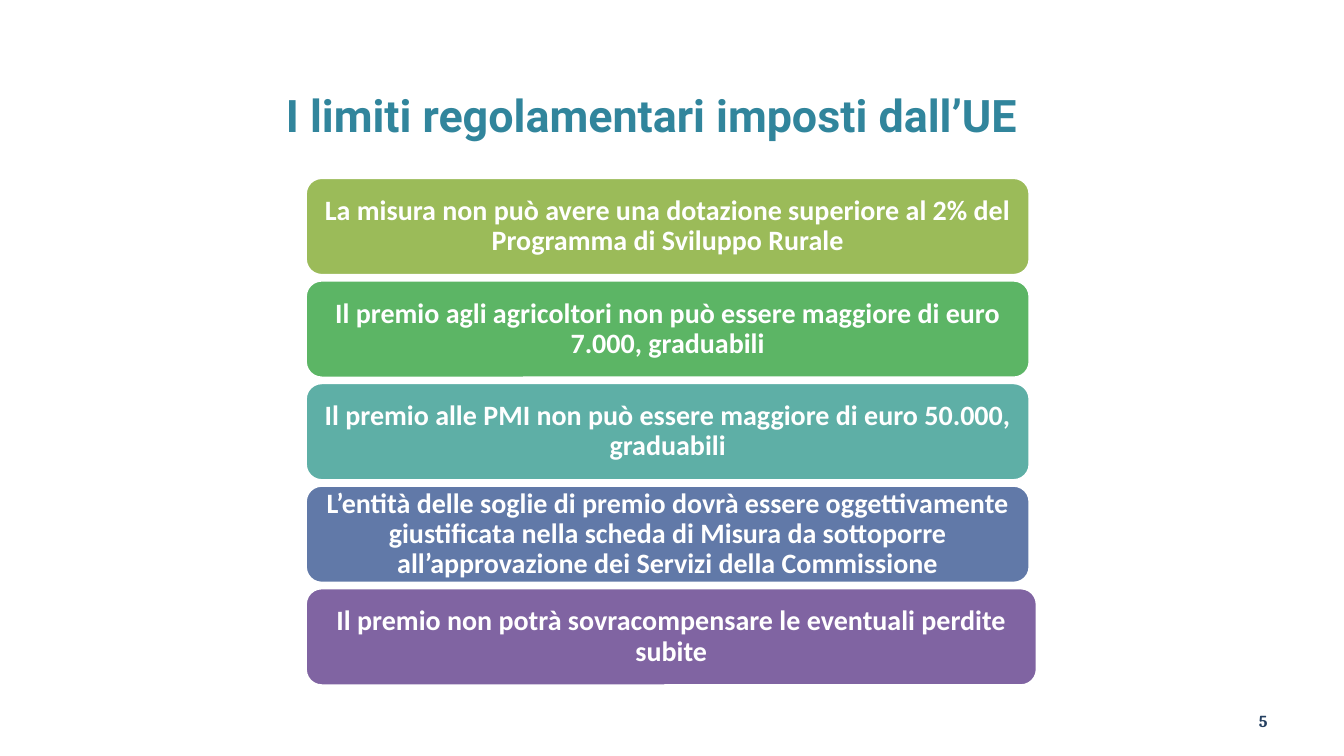
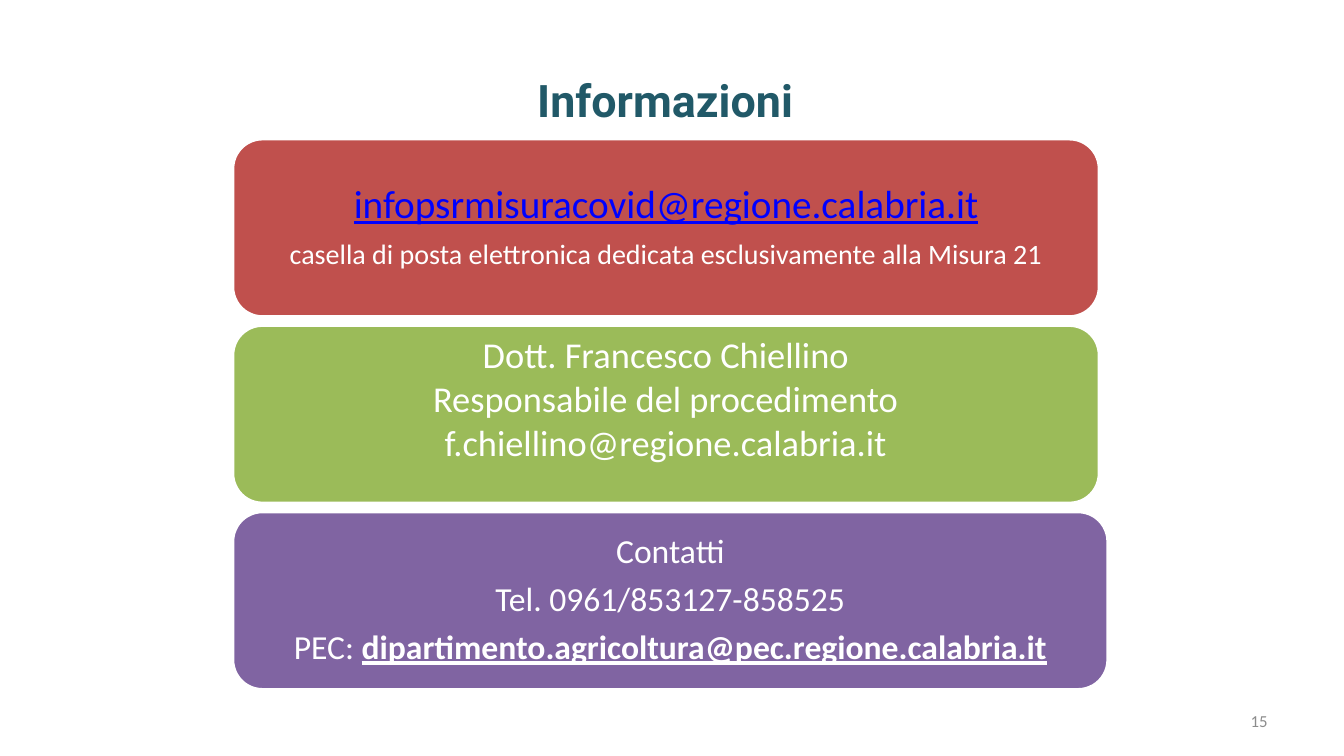
from dataclasses import dataclass

from pptx import Presentation
from pptx.dml.color import RGBColor
from pptx.enum.shapes import MSO_SHAPE
from pptx.enum.text import MSO_ANCHOR, PP_ALIGN
from pptx.util import Inches, Pt

ROUNDED = MSO_SHAPE.ROUNDED_RECTANGLE
MIDDLE = MSO_ANCHOR.MIDDLE
CENTER, RIGHT = PP_ALIGN.CENTER, PP_ALIGN.RIGHT

SLIDE_WIDTH, SLIDE_HEIGHT = Inches(13.33), Inches(7.5)
TITLE_ONLY = 5
BODY_FONT, TITLE_FONT = "Calibri", "Roboto"
WHITE, RED, GREEN, PURPLE = "FFFFFF", "C0504D", "9BBB59", "8064A2"
LINK_BLUE = "0000FF"
CARD_GAP = 0.05
LAST_CARD_STRETCH = 1.01
NUMBER_BOX = (71.7, 92.7, 23.35, 5.3)


@dataclass
class Line:
    """One line of card text, with an optional highlighted ending."""
    text: str
    size: int
    bold: bool = False
    underline: bool = False
    color: str = WHITE
    highlight: str = ""
    tight: bool = True


@dataclass
class Card:
    """A coloured card with its lines and its horizontal, top and bottom insets."""
    fill: str
    lines: list
    insets: tuple = (0.1, 0.05, 0.05)


def rgb(code):
    """Turn a hex string into a colour."""
    return RGBColor.from_string(code)


def to_slide(box):
    """Convert a box in percent of the slide into slide lengths."""
    left, top, width, height = box
    return (int(SLIDE_WIDTH * left / 100), int(SLIDE_HEIGHT * top / 100),
            int(SLIDE_WIDTH * width / 100), int(SLIDE_HEIGHT * height / 100))


def style(font, size, color, name=BODY_FONT, bold=False, underline=False):
    """Format a font."""
    font.name, font.size, font.bold, font.underline = name, Pt(size), bold, underline
    font.color.rgb = rgb(color)


def add_title(slide, text, box, color):
    """Place and format the slide title."""
    title = slide.shapes.title
    title.left, title.top, title.width, title.height = to_slide(box)
    title.text_frame.vertical_anchor = MIDDLE
    title.text_frame.text = text
    heading = title.text_frame.paragraphs[0]
    heading.alignment = CENTER
    style(heading.font, 32, color, TITLE_FONT, bold=True)


def add_number(slide, number, color, font=BODY_FONT, bold=False):
    """Write the page number at the lower right."""
    frame = slide.shapes.add_textbox(*to_slide(NUMBER_BOX)).text_frame
    frame.word_wrap = True
    frame.vertical_anchor = MIDDLE
    frame.text = number
    page = frame.paragraphs[0]
    page.alignment = RIGHT
    style(page.font, 12, color, font, bold)


def write_line(paragraph, line):
    """Write one line of card text."""
    paragraph.alignment = CENTER
    if line.tight:
        paragraph.line_spacing = 0.9
        paragraph.space_after = Pt(round(line.size * 0.35, 1))
    style(paragraph.font, line.size, line.color, bold=line.bold, underline=line.underline)
    paragraph.add_run().text = line.text
    if line.highlight:
        ending = paragraph.add_run()
        ending.text = line.highlight
        ending.font.bold = ending.font.underline = True


def add_card(slide, card, left, top, width, height):
    """Draw one rounded card with its text."""
    panel = slide.shapes.add_shape(ROUNDED, int(left), int(top), int(width), int(height))
    panel.shadow.inherit = False
    panel.fill.solid()
    panel.fill.fore_color.rgb = rgb(card.fill)
    panel.line.color.rgb = rgb(WHITE)
    panel.line.width = Pt(2)
    frame = panel.text_frame
    frame.word_wrap = True
    frame.vertical_anchor = MIDDLE
    side, above, below = card.insets
    frame.margin_left = frame.margin_right = Inches(side)
    frame.margin_top, frame.margin_bottom = Inches(above), Inches(below)
    for index, line in enumerate(card.lines):
        write_line(frame.add_paragraph() if index else frame.paragraphs[0], line)


def add_card_stack(slide, cards, box):
    """Stack equal cards in a box, the last one slightly wider."""
    left, top, width, height = to_slide(box)
    count = len(cards)
    card_height = height / (count + CARD_GAP * (count - 1))
    for index, card in enumerate(cards):
        stretch = LAST_CARD_STRETCH if index == count - 1 else 1
        card_top = top + index * card_height * (1 + CARD_GAP)
        add_card(slide, card, left, card_top, width * stretch, card_height)


def build_limits(slide):
    """Build the slide on the regulatory limits."""
    limits = [
        (GREEN, "La misura non può avere una dotazione superiore al 2% del "
                "Programma di Sviluppo Rurale"),
        ("5CB565", "Il premio agli agricoltori non può essere maggiore di euro "
                   "7.000, graduabili"),
        ("5EAFA6", "Il premio alle PMI non può essere maggiore di euro 50.000, graduabili"),
        ("6179A8", "L’entità delle soglie di premio dovrà essere oggettivamente "
                   "giustificata nella scheda di Misura da sottoporre "
                   "all’approvazione dei Servizi della Commissione"),
        (PURPLE, "Il premio non potrà sovracompensare le eventuali perdite subite"),
    ]
    cards = [Card(fill, [Line(text, 20, bold=True)], (0.08, 0.04, 0.04))
             for fill, text in limits]
    add_title(slide, "I limiti regolamentari imposti dall’UE", (3.5, 10.9, 90, 8.5), "31859C")
    add_card_stack(slide, cards, (22.73, 23.5, 53.9, 67.2))
    add_number(slide, "5", "254061", "Cambria", bold=True)


def build_contacts(slide):
    """Build the slide with the contact details."""
    manager = ["Dott. Francesco Chiellino", "Responsabile del procedimento",
               "f.chiellino@regione.calabria.it"]
    cards = [
        Card(RED, [
            Line("infopsrmisuracovid@regione.calabria.it", 28, underline=True, color=LINK_BLUE),
            Line("casella di posta elettronica dedicata esclusivamente alla Misura 21", 20),
        ]),
        Card(GREEN, [Line(text, 26, tight=False) for text in manager], (0.11, 0.05, 0.37)),
        Card(PURPLE, [
            Line("Contatti", 24),
            Line("Tel. 0961/853127-858525", 24),
            Line("PEC: ", 24, highlight="dipartimento.agricoltura@pec.regione.calabria.it"),
        ]),
    ]
    add_title(slide, "Informazioni", (4.5, 4.8, 90, 16.7), "215968")
    add_card_stack(slide, cards, (17.33, 18.4, 64.45, 72.8))
    add_number(slide, "15", "8C8C8C")


def main():
    """Build and save the presentation."""
    deck = Presentation()
    deck.slide_width, deck.slide_height = SLIDE_WIDTH, SLIDE_HEIGHT
    for build in (build_limits, build_contacts):
        build(deck.slides.add_slide(deck.slide_layouts[TITLE_ONLY]))
    deck.save("out.pptx")


if __name__ == "__main__":
    main()
